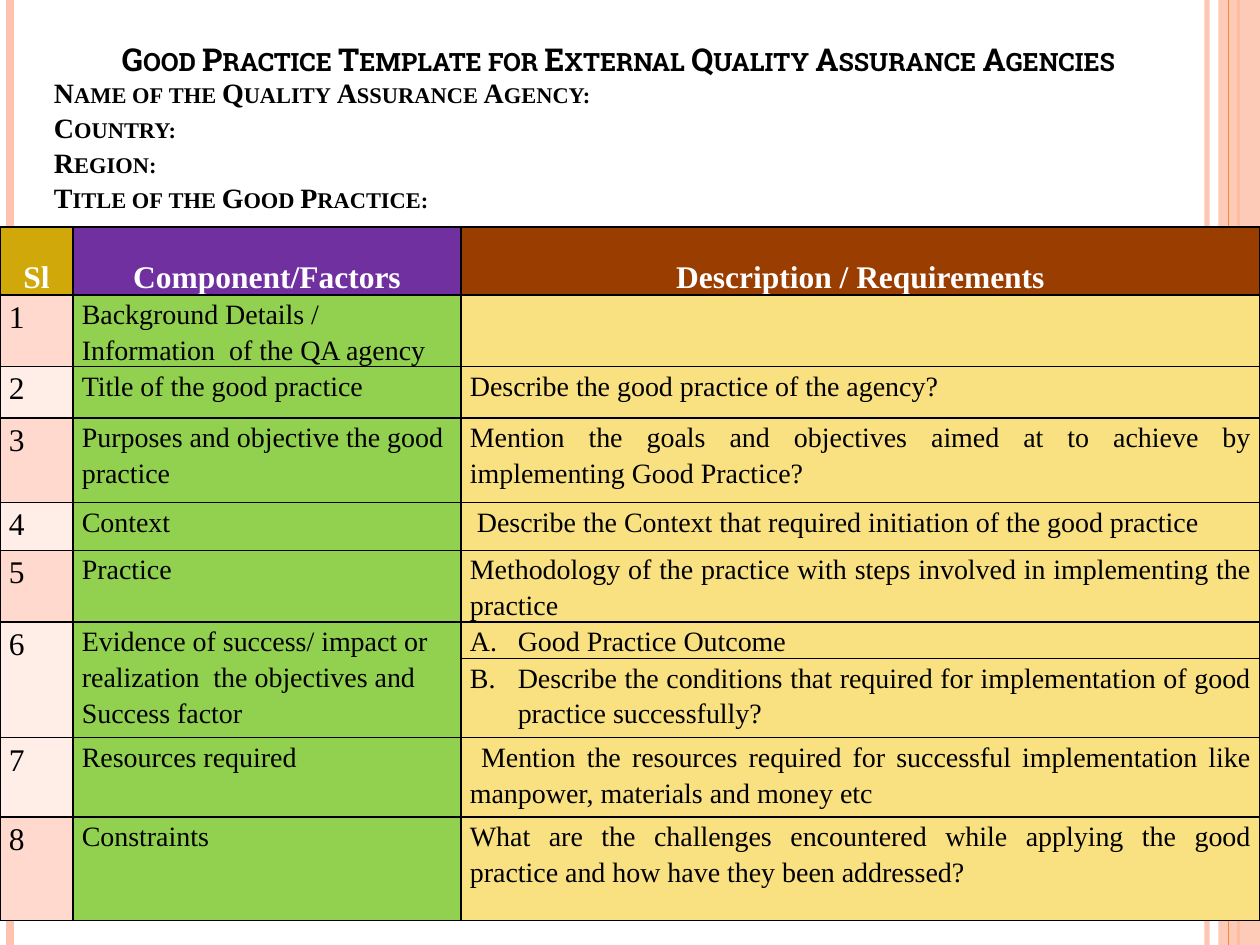
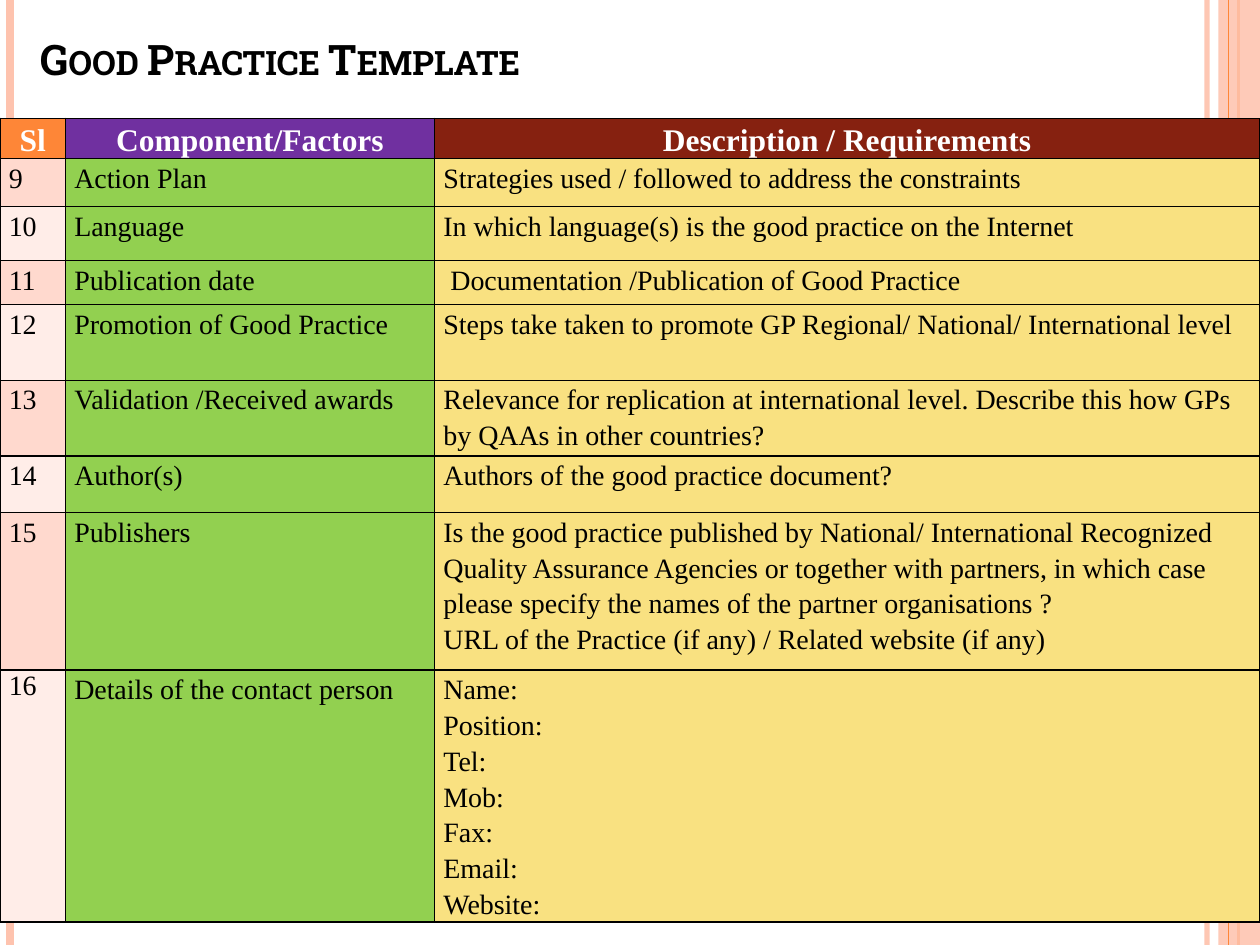
from lxml import etree
from pptx import Presentation
from pptx.dml.color import RGBColor
from pptx.enum import shapes, text
from pptx.oxml.ns import qn
from pptx.util import Inches, Pt

BLACK, WHITE = "000000", "FFFFFF"
PEACH, ORANGE = "FEC3AE", "FE8637"
PURPLE, GREEN, YELLOW = "7030A0", "92D050", "F9E181"
NUMBER_BANDS = ("FFEDE8", "FFD9CE")
BODY_FONT, TITLE_FONT = "Times New Roman", "Roboto Slab"
HEADINGS = ("Sl", "Component/Factors", "Description / Requirements")
LEFT, CENTER, JUSTIFY = text.PP_ALIGN.LEFT, text.PP_ALIGN.CENTER, text.PP_ALIGN.JUSTIFY

AGENCY_FIELDS = [
    "Name of the Quality Assurance Agency:",
    "Country:",
    "Region:",
    "Title of the Good Practice:",
]

# Each row: height, number, component, description lines.
PRACTICE_ROWS = [
    (0.54, "1", "Background Details / Information  of the QA agency", []),
    (0.41, "2", "Title of the good practice",
     ["Describe the good practice of the agency?"]),
    (0.67, "3", "Purposes and objective the good practice",
     ["Mention the goals and objectives aimed at to achieve by implementing Good Practice?"]),
    (0.38, "4", "Context",
     [" Describe the Context that required initiation of the good practice"]),
    (0.43, "5", "Practice",
     ["Methodology of the practice with steps involved in implementing the practice"]),
    (0.29, "6",
     "Evidence of success/ impact or realization  the objectives and Success factor",
     ["Good Practice Outcome"]),
    (0.63, "", "",
     ["Describe the conditions that required for implementation of good practice successfully?"]),
    (0.63, "7", "Resources required",
     [" Mention the resources required for successful implementation like manpower, "
      "materials and money etc"]),
    (0.82, "8", "Constraints",
     ["What are the challenges encountered while applying the good practice and how have "
      "they been addressed?"]),
]

PUBLICATION_ROWS = [
    (0.38, "9", "Action Plan", ["Strategies used / followed to address the constraints"]),
    (0.43, "10", "Language", ["In which language(s) is the good practice on the Internet"]),
    (0.35, "11", "Publication date", [" Documentation /Publication of Good Practice"]),
    (0.6, "12", "Promotion of Good Practice",
     ["Steps take taken to promote GP Regional/ National/ International level"]),
    (0.6, "13", "Validation /Received awards",
     ["Relevance for replication at international level. Describe this how GPs by QAAs "
      "in other countries?"]),
    (0.45, "14", "Author(s)", ["Authors of the good practice document?"]),
    (1.25, "15", "Publishers",
     ["Is the good practice published by National/ International Recognized Quality "
      "Assurance Agencies or together with partners, in which case please specify the "
      "names of the partner organisations ?",
      "URL of the Practice (if any) / Related website (if any)"]),
    (2, "16", "Details of the contact person",
     ["Name:", "Position:", "Tel:", "Mob:", "Fax:", "Email:", "Website:"]),
]


def rgb(color):
    return RGBColor.from_string(color)


def set_opacity(shape, percent):
    for color in shape._element.spPr.iter(qn("a:srgbClr")):
        etree.SubElement(color, qn("a:alpha"), val=str(percent * 1000))


def add_rule(slide, x, color, width):
    """Draw a vertical line over the full slide height."""
    rule = slide.shapes.add_connector(
        shapes.MSO_CONNECTOR.STRAIGHT, Inches(x), 0, Inches(x), Inches(7.5))
    rule.line.color.rgb = rgb(color)
    rule.line.width = Pt(width)
    etree.SubElement(rule._element.spPr, qn("a:effectLst"))
    return rule


def add_side_bands(slide):
    set_opacity(add_rule(slide, 9.58, PEACH, 3), 93)
    add_rule(slide, 0.08, PEACH, 4.5)
    add_rule(slide, 9.83, ORANGE, 1.5)
    band = slide.shapes.add_shape(
        shapes.MSO_SHAPE.RECTANGLE, Inches(9.67), 0, Inches(0.33), Inches(7.5))
    band.shadow.inherit = False
    band.fill.solid()
    band.fill.fore_color.rgb = rgb(PEACH)
    band.line.fill.background()
    set_opacity(band, 87)
    add_rule(slide, 9.75, ORANGE, 0.75)


def write(frame, lines, size, color=BLACK, bold=False, font=BODY_FONT,
          small_caps=False, align=LEFT, spacing=1.0):
    """Fill a text frame with one paragraph per line."""
    frame.word_wrap = True
    font_values = {"name": font, "size": Pt(size), "bold": bold}
    for index, line in enumerate(lines):
        para = frame.paragraphs[0] if index == 0 else frame.add_paragraph()
        para.alignment = align
        para.line_spacing = spacing
        span = para.add_run()
        span.text = line
        for name, value in font_values.items():
            setattr(span.font, name, value)
        span.font.color.rgb = rgb(color)
        if small_caps:
            span._r.get_or_add_rPr().set("cap", "small")


def set_title(slide, title, place, size, align):
    box = slide.shapes.title
    box.left, box.top, box.width, box.height = map(Inches, place)
    box.text_frame.auto_size = text.MSO_AUTO_SIZE.NONE
    box.text_frame.vertical_anchor = text.MSO_ANCHOR.BOTTOM
    write(box.text_frame, [title], size, bold=True, font=TITLE_FONT,
          small_caps=True, align=align)


def add_agency_fields(slide):
    box = slide.shapes.add_textbox(Inches(0.33), Inches(0.67), Inches(9.25), Inches(1.08))
    box.text_frame.vertical_anchor = text.MSO_ANCHOR.BOTTOM
    write(box.text_frame, AGENCY_FIELDS, 16, bold=True, small_caps=True, spacing=1.05)


def format_cell(cell, fill, anchor=text.MSO_ANCHOR.TOP):
    values = {"margin_left": Inches(0.07), "margin_right": Inches(0.07),
              "margin_top": 0, "margin_bottom": 0, "vertical_anchor": anchor}
    for name, value in values.items():
        setattr(cell, name, value)
    properties = cell._tc.get_or_add_tcPr()
    for side in ("lnL", "lnR", "lnT", "lnB"):
        border = etree.SubElement(properties, qn(f"a:{side}"), w=str(Pt(1)))
        paint = etree.SubElement(border, qn("a:solidFill"))
        etree.SubElement(paint, qn("a:srgbClr"), val=BLACK)
    cell.fill.solid()
    cell.fill.fore_color.rgb = rgb(fill)


def add_factor_table(slide, top, widths, header_height, header_fills, rows,
                     number_size, align):
    heights = [header_height] + [row[0] for row in rows]
    table = slide.shapes.add_table(
        len(heights), len(widths), 0, Inches(top),
        Inches(sum(widths)), Inches(sum(heights))).table
    for column, width in zip(table.columns, widths):
        column.width = Inches(width)
    for row, height in zip(table.rows, heights):
        row.height = Inches(height)

    for index, (heading, fill) in enumerate(zip(HEADINGS, header_fills)):
        cell = table.cell(0, index)
        format_cell(cell, fill, text.MSO_ANCHOR.BOTTOM)
        write(cell.text_frame, [heading], 18, WHITE, True, align=CENTER, spacing=1.15)

    for index, (_, number, component, description) in enumerate(rows, start=1):
        columns = (
            ([number] if number else [], number_size, NUMBER_BANDS[index % 2], LEFT),
            ([component] if component else [], 16, GREEN, LEFT),
            (description, 16, YELLOW, align),
        )
        for column, (lines, size, fill, alignment) in enumerate(columns):
            cell = table.cell(index, column)
            format_cell(cell, fill)
            write(cell.text_frame, lines, size, align=alignment, spacing=1.15)
    return table


def letter_paragraph(cell, start):
    """Number a cell's paragraph with a hanging capital letter."""
    properties = cell.text_frame.paragraphs[0]._p.get_or_add_pPr()
    properties.set("marL", str(Inches(0.38)))
    properties.set("indent", str(-Inches(0.38)))
    etree.SubElement(properties, qn("a:buFont"), typeface=BODY_FONT)
    etree.SubElement(properties, qn("a:buAutoNum"), type="alphaUcPeriod", startAt=str(start))


def add_slide(deck):
    slide = deck.slides.add_slide(deck.slide_layouts[5])
    add_side_bands(slide)
    return slide


def build_practice_slide(deck):
    slide = add_slide(deck)
    set_title(slide, "Good Practice Template for External Quality Assurance Agencies",
              (0.2, 0, 9.42, 0.67), 18, CENTER)
    table = add_factor_table(slide, 1.8, (0.58, 3.08, 6.34), 0.54,
                             ("D0A80A", PURPLE, "9A3D01"), PRACTICE_ROWS, 18, JUSTIFY)
    for column in (0, 1):
        table.cell(6, column).merge(table.cell(7, column))
    for start, row in enumerate((6, 7), start=1):
        letter_paragraph(table.cell(row, 2), start)
    add_agency_fields(slide)


def build_publication_slide(deck):
    slide = add_slide(deck)
    set_title(slide, "Good Practice Template", (0.22, 0.19, 9.17, 0.53), 24, LEFT)
    table = add_factor_table(slide, 0.94, (0.52, 2.93, 6.55), 0.3,
                             (ORANGE, PURPLE, "862110"), PUBLICATION_ROWS, 16, LEFT)
    table.cell(8, 0).text_frame.paragraphs[0].line_spacing = 1.0


def main():
    deck = Presentation()
    deck.slide_width, deck.slide_height = Inches(10), Inches(7.5)
    build_practice_slide(deck)
    build_publication_slide(deck)
    deck.save("out.pptx")


if __name__ == "__main__":
    main()
